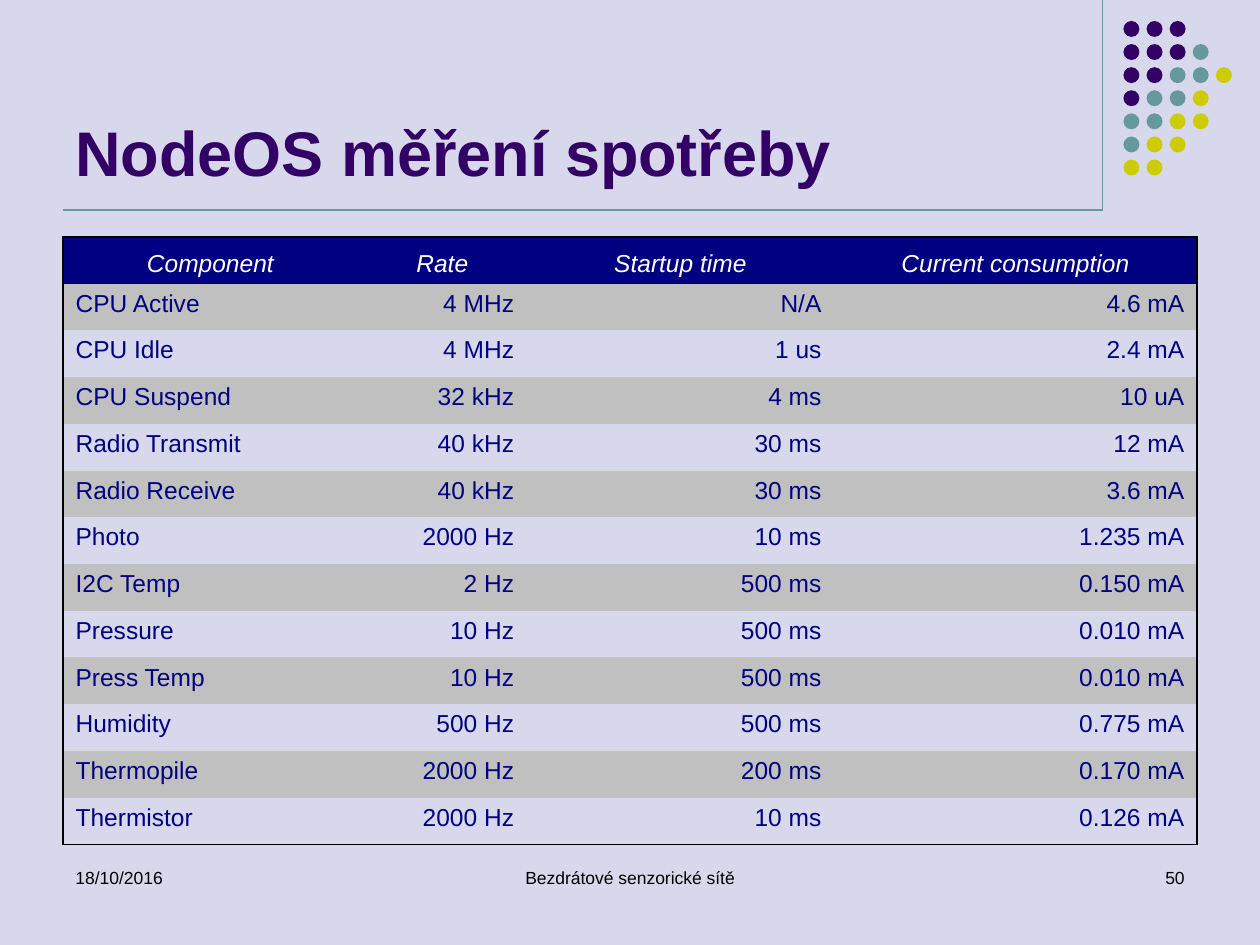
from dataclasses import dataclass

from lxml.etree import SubElement
from pptx import Presentation
from pptx.dml.color import RGBColor
from pptx.enum.shapes import MSO_CONNECTOR, MSO_SHAPE
from pptx.enum.text import MSO_ANCHOR, PP_ALIGN
from pptx.oxml import parse_xml
from pptx.oxml.ns import nsdecls, qn
from pptx.util import Inches, Pt


@dataclass(frozen=True)
class Theme:
    font: str = "Arial"
    background: str = "D8D8EC"
    purple: str = "330066"
    teal: str = "669999"
    lime: str = "CCCC00"
    navy: str = "000080"
    band: str = "C0C0C0"
    black: str = "000000"
    white: str = "FFFFFF"
    title_size: int = 36
    table_size: int = 14
    footer_size: int = 10
    rule_width: float = 0.75
    border_width: float = 1


THEME = Theme()
COLUMNS, ROWS = 60, 45  # slide grid
WIDTH, HEIGHT = Inches(10), Inches(7.5)

# Dot rows: p = purple, t = teal, l = lime
DOTS = ["ppp", "pppt", "ppttl", "pttl", "ttll", "tll", "ll"]
DOT_PITCH, DOT_SIZE = 1.1, 0.76

COLUMN_SHARES = [0.26, 0.149, 0.271, 0.32]
CONSUMPTION = [
    ("Component", "Rate", "Startup time", "Current consumption"),
    ("CPU Active", "4 MHz", "N/A", "4.6 mA"),
    ("CPU Idle", "4 MHz", "1 us", "2.4 mA"),
    ("CPU Suspend", "32 kHz", "4 ms", "10 uA"),
    ("Radio Transmit", "40 kHz", "30 ms", "12 mA"),
    ("Radio Receive", "40 kHz", "30 ms", "3.6 mA"),
    ("Photo", "2000 Hz", "10 ms", "1.235 mA"),
    ("I2C Temp", "2 Hz", "500 ms", "0.150 mA"),
    ("Pressure", "10 Hz", "500 ms", "0.010 mA"),
    ("Press Temp", "10 Hz", "500 ms", "0.010 mA"),
    ("Humidity", "500 Hz", "500 ms", "0.775 mA"),
    ("Thermopile", "2000 Hz", "200 ms", "0.170 mA"),
    ("Thermistor", "2000 Hz", "10 ms", "0.126 mA"),
]


def across(columns):
    return round(WIDTH * columns / COLUMNS)


def down(rows):
    return round(HEIGHT * rows / ROWS)


def place(left, top, width, height):
    return across(left), down(top), across(width), down(height)


def write(frame, words, size, color, align=PP_ALIGN.LEFT, bold=False, italic=False):
    frame.text = words
    paragraph = frame.paragraphs[0]
    paragraph.alignment = align
    font = paragraph.runs[0].font
    font.name, font.size = THEME.font, Pt(size)
    font.bold, font.italic = bold, italic
    font.color.rgb = RGBColor.from_string(color)


def add_words(slide, box, words, size, color, anchor=MSO_ANCHOR.TOP, **style):
    frame = slide.shapes.add_textbox(*place(*box)).text_frame
    frame.word_wrap = True
    frame.vertical_anchor = anchor
    write(frame, words, size, color, **style)


def add_rule(slide, x1, y1, x2, y2):
    rule = slide.shapes.add_connector(
        MSO_CONNECTOR.STRAIGHT, across(x1), down(y1), across(x2), down(y2))
    rule.line.color.rgb = RGBColor.from_string(THEME.teal)
    rule.line.width = Pt(THEME.rule_width)
    SubElement(rule._element.spPr, qn("a:effectLst"))


def add_dots(slide, left, top):
    colors = {"p": THEME.purple, "t": THEME.teal, "l": THEME.lime}
    for row, codes in enumerate(DOTS):
        for column, code in enumerate(codes):
            dot = slide.shapes.add_shape(MSO_SHAPE.OVAL, *place(
                left + column * DOT_PITCH, top + row * DOT_PITCH, DOT_SIZE, DOT_SIZE))
            dot.shadow.inherit = False
            dot.fill.solid()
            dot.fill.fore_color.rgb = RGBColor.from_string(colors[code])
            dot.line.fill.background()


def add_header(slide, left, top, width, height):
    right, bottom = left + width, top + height
    # Rules framing the title
    add_rule(slide, right, top, right, bottom)
    add_rule(slide, left, bottom, right, bottom)
    add_dots(slide, right + 1, top + 1)
    add_words(slide, (left, top + 0.8, width, height - 1.5), "NodeOS měření spotřeby",
              THEME.title_size, THEME.purple, MSO_ANCHOR.BOTTOM, bold=True)


def set_borders(cell, sides):
    """Draw the given sides and clear the others."""
    properties = cell._tc.get_or_add_tcPr()
    for index, side in enumerate("LRTB"):
        paint = (f'<a:solidFill><a:srgbClr val="{THEME.black}"/></a:solidFill>'
                 if side in sides else "<a:noFill/>")
        properties.insert(index, parse_xml(
            f'<a:ln{side} {nsdecls("a")} w="{Pt(THEME.border_width)}">{paint}</a:ln{side}>'))


def add_consumption_table(slide, left, top, width, height):
    last_row, last_column = len(CONSUMPTION) - 1, len(COLUMN_SHARES) - 1
    table = slide.shapes.add_table(
        last_row + 1, last_column + 1, *place(left, top, width, height)).table
    table.first_row = table.horz_banding = False
    for column, share in zip(table.columns, COLUMN_SHARES):
        column.width = across(width * share)
    for r, values in enumerate(CONSUMPTION):
        table.rows[r].height = down(height / len(CONSUMPTION))
        heading = r == 0
        for c, value in enumerate(values):
            cell = table.cell(r, c)
            # Navy heading, then every other row grey
            if heading or r % 2:
                cell.fill.solid()
                cell.fill.fore_color.rgb = RGBColor.from_string(
                    THEME.navy if heading else THEME.band)
            else:
                cell.fill.background()
            if heading:
                align = PP_ALIGN.CENTER
            else:
                align = PP_ALIGN.RIGHT if c else PP_ALIGN.LEFT
            write(cell.text_frame, value, THEME.table_size,
                  THEME.white if heading else THEME.navy, align, italic=heading)
            cell.vertical_anchor = MSO_ANCHOR.BOTTOM if heading else MSO_ANCHOR.TOP
            # Outer frame and the line under the heading
            edges = {"L": c == 0, "R": c == last_column,
                     "T": r <= 1, "B": r in (0, last_row)}
            set_borders(cell, [side for side, drawn in edges.items() if drawn])


def add_footer(slide, left, top, width, height):
    side, middle = 14, 19
    parts = [
        (left, side, "18/10/2016", PP_ALIGN.LEFT),
        (left + (width - middle) / 2, middle, "Bezdrátové senzorické sítě", PP_ALIGN.CENTER),
        (left + width - side, side, "50", PP_ALIGN.RIGHT),
    ]
    for x, part_width, words, align in parts:
        add_words(slide, (x, top, part_width, height), words,
                  THEME.footer_size, THEME.black, align=align)


def main():
    deck = Presentation()
    deck.slide_width, deck.slide_height = WIDTH, HEIGHT
    slide = deck.slides.add_slide(deck.slide_layouts[6])
    slide.background.fill.solid()
    slide.background.fill.fore_color.rgb = RGBColor.from_string(THEME.background)
    add_header(slide, 3, 0, 49.5, 10)
    add_footer(slide, 3, 41, 54, 3)
    add_consumption_table(slide, 3, 11.28, 54, 28.94)
    deck.save("out.pptx")


if __name__ == "__main__":
    main()
